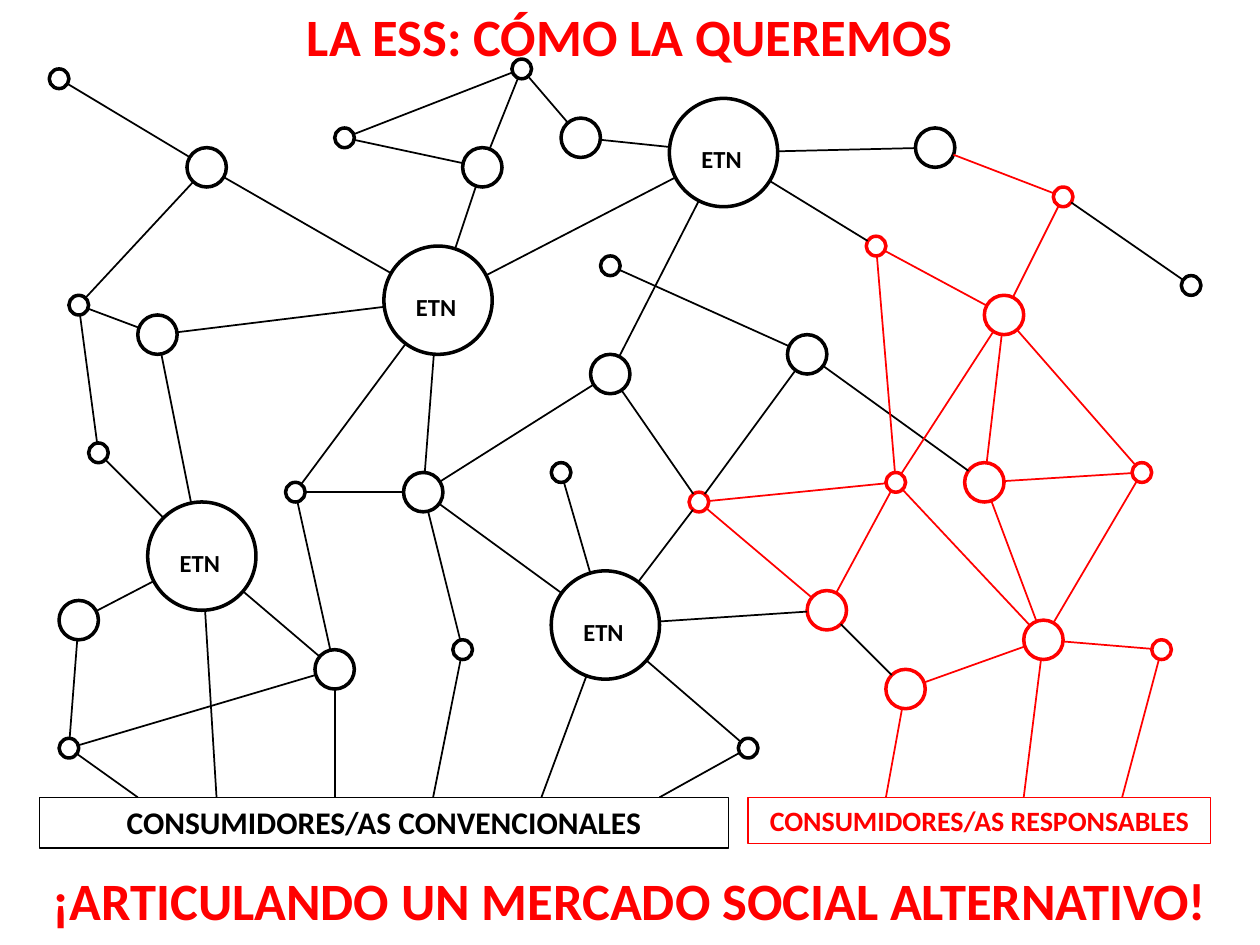
from math import hypot

from lxml import etree
from pptx import Presentation
from pptx import util as u
from pptx.dml.color import RGBColor
from pptx.enum import shapes, text
from pptx.oxml.ns import qn

BLACK = RGBColor(0, 0, 0)
RED = RGBColor(255, 0, 0)
FONT = "Calibri"

# The slide is a grid of 128 by 96 steps; all boxes and centres are in steps
COLUMNS, ROWS = 128, 96
HUB, FIRM, SMALL = 11, 4, 2

# Colour, diameter, node names and their centres
GROUPS = [
    (BLACK, HUB, "ABCD", [(44.5, 30.5), (73.5, 15.5), (61.5, 63.5), (20.5, 56.5)]),
    (BLACK, FIRM, "EFGHIJKLMN", [
        (49, 17), (43, 50), (16, 34), (34, 68), (62, 38),
        (21, 17), (82, 36), (95, 15), (59, 14), (8, 63)]),
    (RED, FIRM, "OPQRS", [(100, 49), (102, 32), (106, 65), (84, 62), (92, 70)]),
    (BLACK, SMALL, "abcdefghijkl", [
        (8, 31), (30, 50), (35, 14), (62, 27), (47, 66), (121, 29),
        (57, 48), (6, 8), (7, 76), (76, 76), (10, 46), (53, 7)]),
    (RED, SMALL, "mnopqr", [
        (116, 48), (108, 20), (71, 51), (89, 25), (91, 49), (118, 66)]),
]

# Each pair of letters names the two nodes of a link
LINKS = {
    BLACK: "Bp dK KO nf BL Io SR gC Fe AF GD Ja Cj bH DH Hi cE oC BI JA AB kD "
           "Jh Ab EA aG lM lE MB oK CR FI FC GA bF ak ND Ni lc",
    RED: "Pm OQ mQ Qr Rq oR Om nP Ln qP qQ SQ pP pq PO oq",
}

# Where the link from a node meets the consumers below
DROPS = {
    BLACK: {"C": 55, "D": 22, "e": 44, "H": 34, "i": 14, "j": 67},
    RED: {"r": 114, "Q": 104, "S": 90},
}


def lengths(*steps):
    return [u.Cm(value * 25.4 / COLUMNS) for value in steps]


def write(shape, words, size, color=BLACK, align=text.PP_ALIGN.CENTER,
          anchor=text.MSO_ANCHOR.MIDDLE, wrap=True):
    frame = shape.text_frame
    frame.word_wrap = wrap
    frame.vertical_anchor = anchor
    para = frame.paragraphs[0]
    para.alignment = align
    span = para.add_run()
    span.text = words
    span.font.name = FONT
    span.font.size = u.Pt(size)
    span.font.bold = True
    span.font.color.rgb = color


def add_outline(page, kind, box, color, width):
    """Add an unfilled shape with a plain border."""
    shape = page.shapes.add_shape(kind, *lengths(*box))
    shape.shadow.inherit = False
    shape.fill.background()
    shape.line.color.rgb = color
    shape.line.width = u.Pt(width)
    return shape


def add_link(page, start, end, color):
    """Join two circles, given as x, y and diameter, from rim to rim."""
    (x1, y1, size1), (x2, y2, size2) = start, end
    span = hypot(x2 - x1, y2 - y1)
    dx, dy = (x2 - x1) / span / 2, (y2 - y1) / span / 2
    link = page.shapes.add_connector(
        shapes.MSO_CONNECTOR.STRAIGHT,
        *lengths(x1 + dx * size1, y1 + dy * size1, x2 - dx * size2, y2 - dy * size2))
    link.line.color.rgb = color
    link.line.width = u.Pt(1)
    etree.SubElement(link._element.spPr, qn("a:effectLst"))


def add_network(page, box):
    left, top, _, height = box
    nodes = {}
    for color, size, names, centres in GROUPS:
        for name, (x, y) in zip(names, centres):
            x, y = left + x, top + y
            nodes[name] = (x, y, size)
            corner_x, corner_y = x - size / 2, y - size / 2
            add_outline(page, shapes.MSO_SHAPE.OVAL,
                        (corner_x, corner_y, size, size), color, 2)
            if size == HUB:
                label = page.shapes.add_textbox(
                    *lengths(corner_x + 2, corner_y + 4, 7, 4.3))
                write(label, "ETN", 14, align=text.PP_ALIGN.LEFT,
                      anchor=text.MSO_ANCHOR.TOP, wrap=False)
    for color, pairs in LINKS.items():
        for start, end in pairs.split():
            add_link(page, nodes[start], nodes[end], color)
        for name, x in DROPS[color].items():
            add_link(page, nodes[name], (left + x, top + height, 0), color)


def add_consumers(page, box, words, size, color):
    bar = add_outline(page, shapes.MSO_SHAPE.RECTANGLE, box, color, 0.75)
    write(bar, words, size, color, anchor=text.MSO_ANCHOR.TOP)


def add_title(page, box, words):
    title = page.shapes.title
    title.left, title.top, title.width, title.height = lengths(*box)
    write(title, words, 30, RED)


def add_slogan(page, box, words):
    slogan = page.shapes.add_textbox(*lengths(*box))
    write(slogan, words, 30, RED)


def main():
    deck = Presentation()
    deck.slide_width, deck.slide_height = lengths(COLUMNS, ROWS)
    page = deck.slides.add_slide(deck.slide_layouts.get_by_name("Title Only"))
    floor, band = 81, 9.2
    add_network(page, (0, 0, COLUMNS, floor))
    add_consumers(page, (4, floor, 70, 5.15), "CONSUMIDORES/AS CONVENCIONALES", 18, BLACK)
    add_consumers(page, (76, floor, 47, 4.7), "CONSUMIDORES/AS RESPONSABLES", 16, RED)
    add_title(page, (0, -1, COLUMNS, band), "LA ESS: CÓMO LA QUEREMOS")
    add_slogan(page, (0, ROWS - band, COLUMNS, band),
               "¡ARTICULANDO UN MERCADO SOCIAL ALTERNATIVO!")
    deck.save("out.pptx")


if __name__ == "__main__":
    main()
